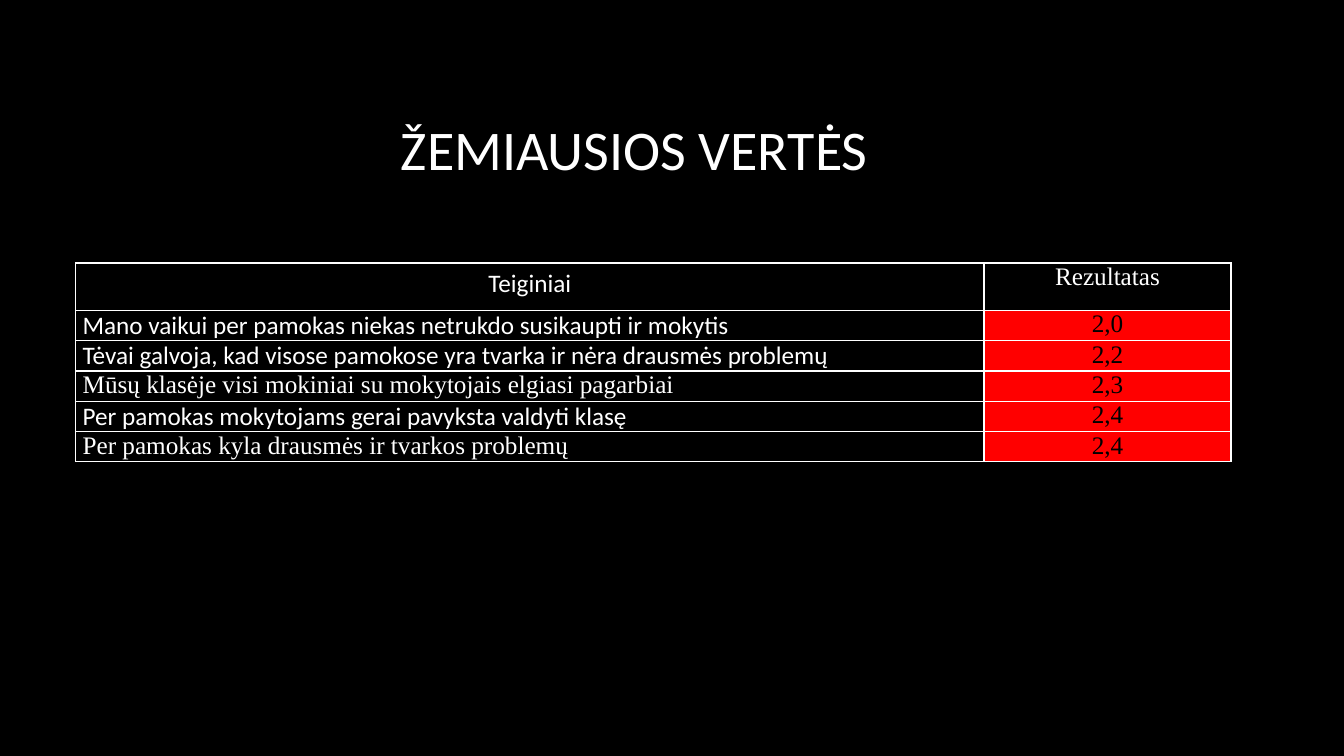
"""Build a slide with a table of the lowest-rated statements."""
from lxml.etree import SubElement
from pptx import Presentation
from pptx.dml.color import RGBColor
from pptx.enum.text import MSO_ANCHOR, PP_ALIGN
from pptx.oxml.ns import qn
from pptx.util import Inches, Pt

THEME = {
    "background": "000000", "light": "FFFFFF", "dark": "000000", "low": "FF0000",
    "sans": "Calibri", "serif": "Times New Roman",
    "title_size": 40, "table_size": 18, "border": 1,
}
SANS, SERIF = THEME["sans"], THEME["serif"]
LINE_HEIGHT = {SANS: 0.3, SERIF: 0.28}
HEADER_HEIGHT = 0.47
COLUMN_WIDTHS = (9.01, 2.45)
LEFT = 0.75

RESULTS = [
    ("Teiginiai", "Rezultatas", SANS),
    ("Mano vaikui per pamokas niekas netrukdo susikaupti ir mokytis", "2,0", SANS),
    ("Tėvai galvoja, kad visose pamokose yra tvarka ir nėra drausmės problemų", "2,2", SANS),
    ("Mūsų klasėje visi mokiniai su mokytojais elgiasi pagarbiai", "2,3", SERIF),
    ("Per pamokas mokytojams gerai pavyksta valdyti klasę", "2,4", SANS),
    ("Per pamokas kyla drausmės ir tvarkos problemų", "2,4", SERIF),
]


def write(frame, text, font, size, color, align):
    paragraph = frame.paragraphs[0]
    paragraph.alignment = align
    run = paragraph.add_run()
    run.text = text
    run.font.name = font
    run.font.size = Pt(size)
    run.font.color.rgb = RGBColor.from_string(color)


def add_borders(cell):
    properties = cell._tc.get_or_add_tcPr()
    for side in ("a:lnL", "a:lnR", "a:lnT", "a:lnB"):
        line = SubElement(properties, qn(side), w=str(Pt(THEME["border"])))
        SubElement(SubElement(line, qn("a:solidFill")), qn("a:srgbClr"), val=THEME["light"])


deck = Presentation()
deck.slide_width, deck.slide_height = Inches(13.33), Inches(7.5)
slide = deck.slides.add_slide(deck.slide_layouts[6])
slide.background.fill.solid()
slide.background.fill.fore_color.rgb = RGBColor.from_string(THEME["background"])

heading = slide.shapes.add_textbox(Inches(LEFT), Inches(0.67), Inches(11.08), Inches(1.59)).text_frame
heading.word_wrap = True
heading.vertical_anchor = MSO_ANCHOR.MIDDLE
write(heading, "ŽEMIAUSIOS VERTĖS", SANS, THEME["title_size"], THEME["light"], PP_ALIGN.CENTER)

heights = [HEADER_HEIGHT] + [LINE_HEIGHT[font] for _, _, font in RESULTS[1:]]
ratings = slide.shapes.add_table(
    len(RESULTS), len(COLUMN_WIDTHS), Inches(LEFT), Inches(2.61),
    Inches(sum(COLUMN_WIDTHS)), Inches(sum(heights))).table
ratings.first_row = ratings.horz_banding = False
for column, width in zip(ratings.columns, COLUMN_WIDTHS):
    column.width = Inches(width)
for row, height in zip(ratings.rows, heights):
    row.height = Inches(height)

TIGHT = {"margin_left": 0.07, "margin_right": 0.07, "margin_top": 0, "margin_bottom": 0}
for r, (statement, result, statement_font) in enumerate(RESULTS):
    for c, (text, font) in enumerate([(statement, statement_font), (result, SERIF)]):
        cell = ratings.cell(r, c)
        is_score = r > 0 and c == 1
        if r or c:
            for margin, inset in TIGHT.items():
                setattr(cell, margin, Inches(inset))
        add_borders(cell)
        if is_score:
            cell.fill.solid()
            cell.fill.fore_color.rgb = RGBColor.from_string(THEME["low"])
        else:
            cell.fill.background()
        write(cell.text_frame, text, font, THEME["table_size"],
              THEME["dark" if is_score else "light"],
              PP_ALIGN.LEFT if r and not c else PP_ALIGN.CENTER)

deck.save("out.pptx")
